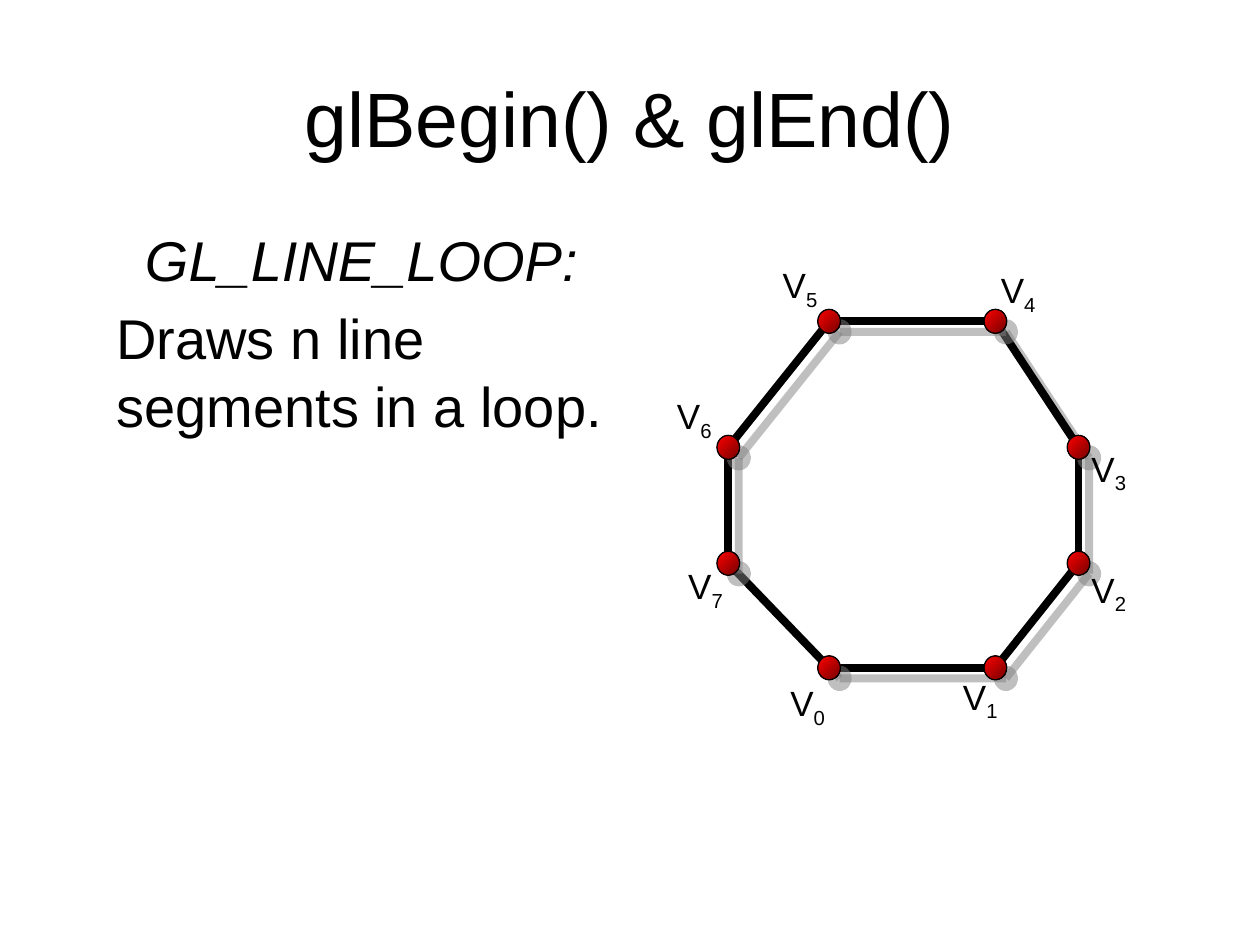
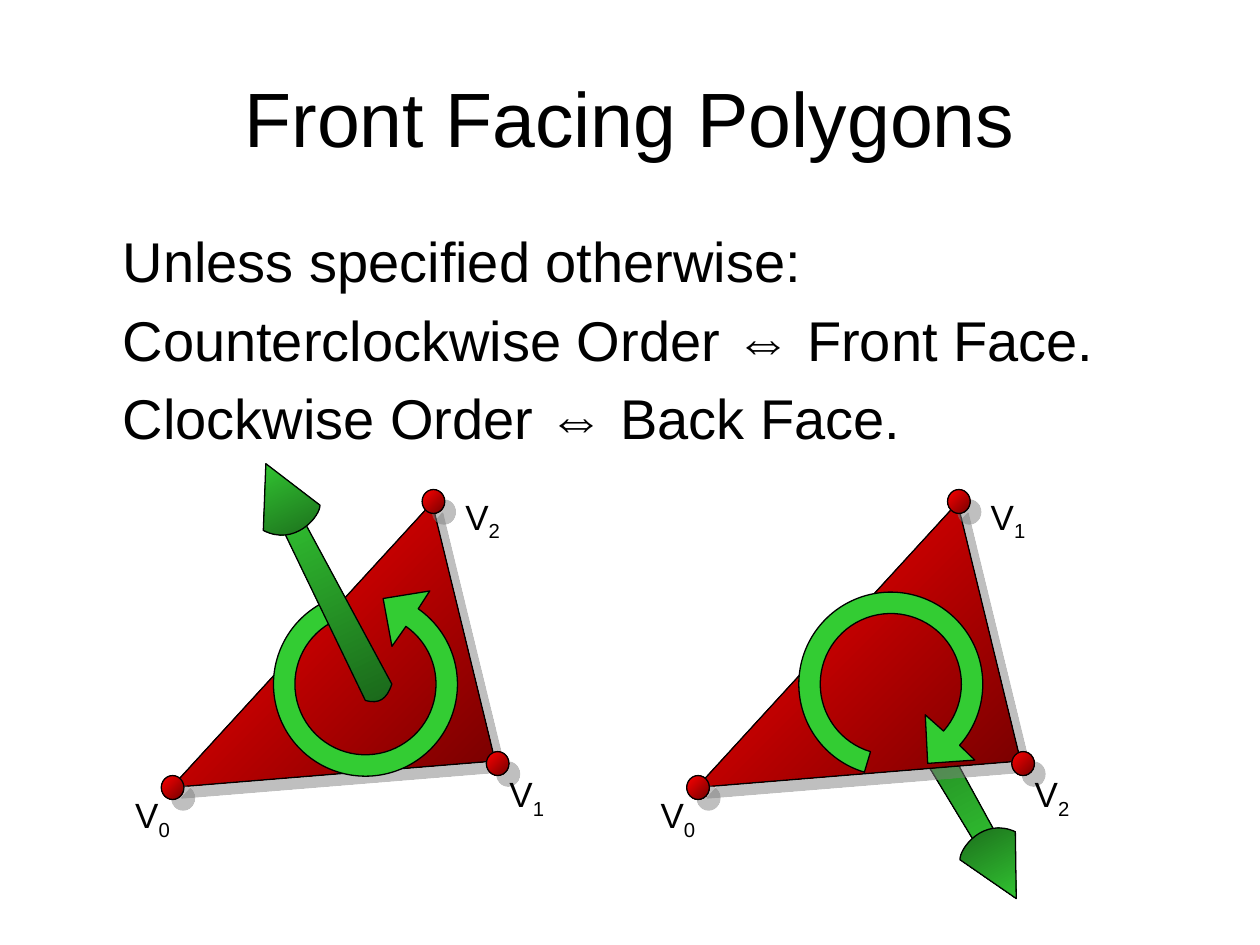
"""Build two slides on OpenGL line loops and front facing polygons."""
import math
from dataclasses import dataclass
from typing import NamedTuple

from lxml import etree
from pptx import Presentation, util as u
from pptx.dml import color
from pptx.enum import shapes, text
from pptx.oxml import ns

COLORS = {
    "ink": "000000",
    "shadow": "808080",
    "red": "FF0000",
    "dark red": "760000",
    "green": "33CC33",
    "dark green": "185E18",
}
FONT = "Arial"
TITLE_BOX = (0.5, 0.3, 9, 1.25)
DOT_SIZE = (0.18, 0.19)
LABEL_SIZE = (0.58, 0.43)
TEXT_INDENT = 3 / 8
TRIANGLE_GAP = 4.17


class Point(NamedTuple):
    x: float
    y: float


Outline = list[tuple[Point, ...]]


@dataclass(frozen=True)
class Vertex:
    number: int
    at: Point
    label: Point


@dataclass(frozen=True)
class Line:
    content: str
    subscript: str = ""
    italic: bool = False
    centred: bool = False
    indent: float = 0


LOOP = [
    Vertex(0, Point(6.58, 5.3), Point(6.12, 5.36)),
    Vertex(1, Point(7.9, 5.3), Point(7.49, 5.31)),
    Vertex(2, Point(8.56, 4.47), Point(8.51, 4.46)),
    Vertex(3, Point(8.56, 3.55), Point(8.51, 3.5)),
    Vertex(4, Point(7.9, 2.55), Point(7.79, 2.08)),
    Vertex(5, Point(6.58, 2.55), Point(6.06, 2.04)),
    Vertex(6, Point(5.78, 3.55), Point(5.22, 3.08)),
    Vertex(7, Point(5.78, 4.47), Point(5.31, 4.43)),
]
TRIANGLE_DOTS = [Point(1.37, 6.25), Point(3.95, 6.06), Point(3.44, 3.98)]
TRIANGLE_LABELS = [Point(0.92, 6.25), Point(3.89, 6.08), Point(3.54, 3.88)]
TRIANGLE_CORNERS = [Point(1.36, 6.25), Point(3.93, 6.04), Point(3.43, 3.99)]
ORIGIN = Point(0, 0)
RING_CENTRE = Point(2.9, 5.43)
NORMAL_CENTRE = Point(2.64, 4.79)
BACK_NORMAL_CENTRE = Point(7.48, 6.05)


def rgb(name: str) -> color.RGBColor:
    """Return a named colour."""
    return color.RGBColor.from_string(COLORS[name])


def inches(*values: float) -> list[u.Length]:
    """Convert numbers to lengths."""
    return [u.Inches(value) for value in values]


def set_shadow(shape, visible: bool) -> None:
    """Give a shape or connector a diagonal shadow, or none."""
    effects = etree.SubElement(shape.element.spPr, ns.qn("a:effectLst"))
    if visible:
        outer = etree.SubElement(effects, ns.qn("a:outerShdw"), blurRad="0",
                                 dist=str(u.Pt(8.5)), dir="2700000",
                                 algn="ctr", rotWithShape="0")
        tint = etree.SubElement(outer, ns.qn("a:srgbClr"), val=COLORS["shadow"])
        etree.SubElement(tint, ns.qn("a:alpha"), val="50000")


def paint(shape, fills: tuple[str, ...], shadow: bool = False) -> None:
    """Fill with one colour or a diagonal gradient, and add a thin outline."""
    if len(fills) == 1:
        shape.fill.solid()
        shape.fill.fore_color.rgb = rgb(fills[0])
    else:
        shape.fill.gradient()
        shape.fill.gradient_angle = 315
        for stop, name in zip(shape.fill.gradient_stops, fills):
            stop.color.rgb = rgb(name)
    shape.line.color.rgb = rgb("ink")
    shape.line.width = u.Pt(0.75)
    set_shadow(shape, shadow)


def add_text(slide, box: tuple[float, ...], lines: list[Line], *, size: float = 32,
             space: float = 0, middle: bool = False) -> None:
    """Add a text box holding the given lines."""
    frame = slide.shapes.add_textbox(*inches(*box)).text_frame
    frame.word_wrap = True
    frame.vertical_anchor = text.MSO_ANCHOR.MIDDLE if middle else text.MSO_ANCHOR.TOP
    for index, line in enumerate(lines):
        paragraph = frame.add_paragraph() if index else frame.paragraphs[0]
        if index:
            paragraph.space_before = u.Pt(space)
        paragraph.alignment = text.PP_ALIGN.CENTER if line.centred else text.PP_ALIGN.LEFT
        paragraph._p.get_or_add_pPr().set("marL", str(u.Inches(line.indent)))
        for content, baseline in ((line.content, 0), (line.subscript, -25000)):
            if not content:
                continue
            run = paragraph.add_run()
            run.text = content
            run.font.name = FONT
            run.font.size = u.Pt(size)
            run.font.italic = line.italic
            run.font.color.rgb = rgb("ink")
            if baseline:
                run._r.get_or_add_rPr().set("baseline", str(baseline))


def add_title(slide, title: str) -> None:
    """Add the slide title."""
    add_text(slide, TITLE_BOX, [Line(title, centred=True)], size=44, middle=True)


def add_dot(slide, at: Point) -> None:
    """Mark a vertex with a red dot."""
    width, height = DOT_SIZE
    dot = slide.shapes.add_shape(
        shapes.MSO_SHAPE.OVAL,
        *inches(at.x - width / 2, at.y - height / 2, width, height))
    paint(dot, ("red", "dark red"), shadow=True)


def add_label(slide, vertex: Vertex) -> None:
    """Write the name of a vertex."""
    add_text(slide, (*vertex.label, *LABEL_SIZE),
             [Line("V", subscript=str(vertex.number), centred=True)], size=20)


def add_edge(slide, start: Point, end: Point) -> None:
    """Join two vertices with a thick line."""
    edge = slide.shapes.add_connector(shapes.MSO_CONNECTOR.STRAIGHT,
                                      *inches(*start, *end))
    edge.line.color.rgb = rgb("ink")
    edge.line.width = u.Pt(4.5)
    set_shadow(edge, True)


def turned(outline: Outline, origin: Point, target: Point, degrees: float) -> Outline:
    """Rotate an outline about an origin and move that origin to a target."""
    cos, sin = math.cos(math.radians(degrees)), math.sin(math.radians(degrees))
    return [tuple(Point(target.x + (x - origin.x) * cos - (y - origin.y) * sin,
                        target.y + (x - origin.x) * sin + (y - origin.y) * cos)
                  for x, y in segment) for segment in outline]


def middle_of(outline: Outline) -> Point:
    """Return the centre of the box around an outline."""
    xs, ys = zip(*(point for segment in outline for point in segment))
    return Point((min(xs) + max(xs)) / 2, (min(ys) + max(ys)) / 2)


def add_outline(slide, outline: Outline, fills: tuple[str, ...], *,
                rotation: float = 0, shadow: bool = False) -> None:
    """Draw a closed outline of lines and three-point curves in a rotated box."""
    upright = turned(outline, ORIGIN, ORIGIN, -rotation)
    centre = middle_of(upright)
    [(target,)] = turned([(centre,)], ORIGIN, ORIGIN, rotation)
    start, *rest = [tuple(inches(*point))
                    for segment in turned(upright, centre, target, 0)
                    for point in segment]
    builder = slide.shapes.build_freeform(*start)
    builder.add_line_segments(rest, close=True)
    shape = builder.convert_to_shape()
    steps = iter(list(shape.element.iter(ns.qn("a:lnTo"))))
    for segment in outline[1:]:
        nodes = [next(steps) for _ in segment]
        if len(nodes) == 3:
            bend = etree.Element(ns.qn("a:cubicBezTo"))
            nodes[0].addprevious(bend)
            for node in nodes:
                bend.append(node[0])
                node.getparent().remove(node)
    shape.rotation = rotation
    paint(shape, fills, shadow)


def arc(radius: float, start: float, end: float, pieces: int = 4) -> Outline:
    """Return an arc about the origin as curves, with angles in degrees."""
    sweep = math.radians(end - start) / pieces
    pull = 4 / 3 * math.tan(sweep / 4)
    first = Point(radius, 0)
    last = Point(radius * math.cos(sweep), radius * math.sin(sweep))
    piece = (Point(radius, radius * pull),
             Point(last.x + pull * last.y, last.y - pull * last.x), last)
    outline = turned([(first,)], ORIGIN, ORIGIN, start)
    for index in range(pieces):
        outline += turned([piece], ORIGIN, ORIGIN, start + index * math.degrees(sweep))
    return outline


def shifted(point: Point, dx: float) -> Point:
    """Move a point sideways."""
    return Point(point.x + dx, point.y)


def add_order_ring(slide, centre: Point, clockwise: bool) -> None:
    """Draw the circular arrow that shows the vertex order."""
    head = [(Point(0.51, -0.74),), (Point(0.14, -0.68),), (Point(0.21, -0.3),)]
    ring = arc(0.56, -55, 240) + arc(0.73, 240, -55) + head
    if clockwise:
        ring = [tuple(Point(x, -y) for x, y in segment) for segment in ring]
    add_outline(slide, turned(ring, ORIGIN, centre, -13.3 if clockwise else 0),
                ("green",), rotation=40.2 if clockwise else 126.5)


def add_normal(slide, centre: Point, degrees: float, rotation: float,
               fills: tuple[str, str]) -> None:
    """Draw the shaft and the head of a face normal."""
    shaft = [(Point(2.19, 4.09),), (Point(2.9, 5.56),),
             (Point(3.01, 5.59), Point(3.07, 5.55), Point(3.11, 5.43)),
             (Point(2.35, 4.02),)]
    head = [(Point(2.09, 4.21),),
            (Point(2.34, 4.34), Point(2.54, 4.1), Point(2.54, 4.01)),
            (Point(2.11, 3.68),)]
    for part in (shaft, head):
        add_outline(slide, turned(part, NORMAL_CENTRE, centre, degrees), fills,
                    rotation=rotation)


def add_triangle(slide, dx: float, numbers: tuple[int, ...]) -> None:
    """Draw a red triangle with its numbered vertices."""
    add_outline(slide, [(shifted(corner, dx),) for corner in TRIANGLE_CORNERS],
                ("red", "dark red"), shadow=True)
    for dot in TRIANGLE_DOTS:
        add_dot(slide, shifted(dot, dx))
    for number, dot, label in zip(numbers, TRIANGLE_DOTS, TRIANGLE_LABELS):
        add_label(slide, Vertex(number, shifted(dot, dx), shifted(label, dx)))


def build_line_loop(slide) -> None:
    """Build the line loop slide."""
    for index, vertex in enumerate(LOOP):
        add_edge(slide, LOOP[index - 1].at, vertex.at)
    add_title(slide, "glBegin() & glEnd()")
    for vertex in LOOP:
        add_dot(slide, vertex.at)
    for vertex in LOOP:
        add_label(slide, vertex)
    add_text(slide, (0.45, 1.74, 4.84, 4.55), [
        Line("GL_LINE_LOOP:", italic=True, centred=True),
        Line("Draws n line segments in a loop.", indent=TEXT_INDENT),
    ], space=6.4)


def build_front_facing(slide) -> None:
    """Build the front facing polygons slide."""
    add_normal(slide, BACK_NORMAL_CENTRE, 177.1, 17, ("dark green", "green"))
    add_title(slide, "Front Facing Polygons")
    rules = ["Unless specified otherwise:",
             "Counterclockwise Order ⇔ Front Face.",
             "Clockwise Order ⇔ Back Face."]
    add_text(slide, (0.5, 1.75, 9, 4.95),
             [Line(rule, indent=TEXT_INDENT) for rule in rules], space=6.4)
    add_triangle(slide, 0, (0, 1, 2))
    add_order_ring(slide, RING_CENTRE, clockwise=False)
    add_normal(slide, NORMAL_CENTRE, 0, 19.9, ("green", "dark green"))
    add_triangle(slide, TRIANGLE_GAP, (0, 2, 1))
    add_order_ring(slide, shifted(RING_CENTRE, TRIANGLE_GAP), clockwise=True)


def main() -> None:
    """Build and save the presentation."""
    deck = Presentation()
    deck.slide_width, deck.slide_height = inches(10, 7.5)
    for build in (build_line_loop, build_front_facing):
        build(deck.slides.add_slide(deck.slide_layouts[6]))
    deck.save("out.pptx")


if __name__ == "__main__":
    main()
